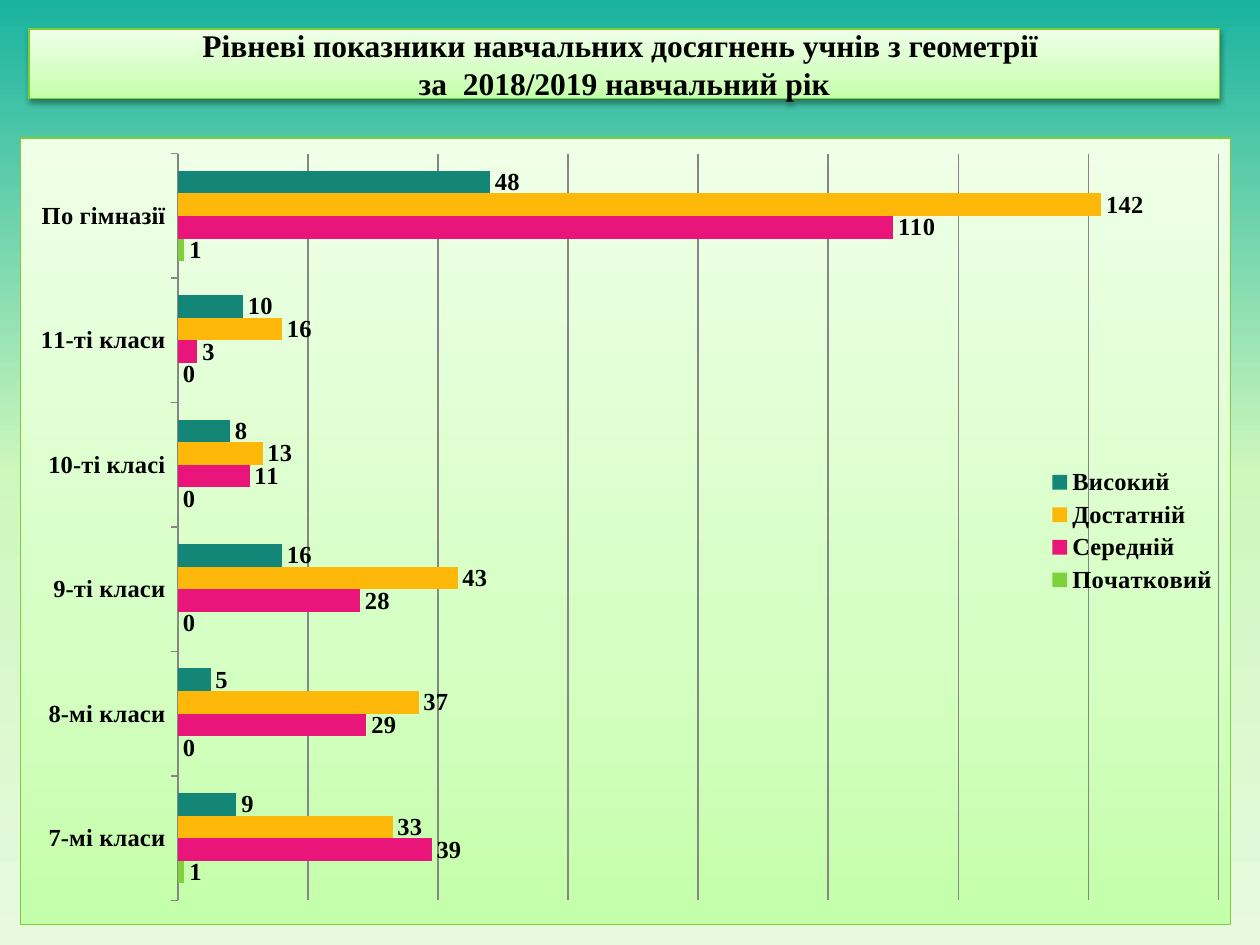
from lxml import etree
from pptx import Presentation
from pptx.chart.data import CategoryChartData
from pptx.dml.color import RGBColor
from pptx.enum.chart import XL_CHART_TYPE, XL_LABEL_POSITION, XL_LEGEND_POSITION, XL_TICK_LABEL_POSITION, XL_TICK_MARK
from pptx.enum.shapes import MSO_SHAPE
from pptx.enum.text import MSO_ANCHOR, PP_ALIGN
from pptx.util import Pt

BAR = XL_CHART_TYPE.BAR_CLUSTERED
OUT_END = XL_LABEL_POSITION.OUTSIDE_END
RIGHT = XL_LEGEND_POSITION.RIGHT
LOW = XL_TICK_LABEL_POSITION.LOW
TICK_OUT = XL_TICK_MARK.OUTSIDE
RECT = MSO_SHAPE.RECTANGLE
MIDDLE = MSO_ANCHOR.MIDDLE
CENTER = PP_ALIGN.CENTER

A = "http://schemas.openxmlformats.org/drawingml/2006/main"
C = "http://schemas.openxmlformats.org/drawingml/2006/chart"
COLORS = {
    "text": "000000", "border": "7CD036", "grid": "868686",
    "Початковий": "7FD13B", "Середній": "EA157A",
    "Достатній": "FEB80A", "Високий": "138677",
}
BACKGROUND = [(0, "1AB39F"), (50, "CEF7BD"), (100, "E7FADF")]
PANEL = [(0, "C4FFAA"), (35, "D5FFC3"), (100, "EFFFE8")]
TITLE_FONT = {"size": Pt(18), "bold": True, "name": "Times New Roman"}
CHART_FONT = {"size": Pt(14), "bold": True, "name": "Times New Roman"}
CATEGORIES = ["7-мі класи", "8-мі класи", "9-ті класи", "10-ті класі", "11-ті класи", "По гімназії"]
SERIES = {
    "Початковий": [1, 0, 0, 0, 0, 1],
    "Середній": [39, 29, 28, 11, 3, 110],
    "Достатній": [33, 37, 43, 13, 16, 142],
    "Високий": [9, 5, 16, 8, 10, 48],
}


def gradient(stops, angle):
    gs = "".join(f'<a:gs pos="{pos * 1000}"><a:srgbClr val="{color}"/></a:gs>' for pos, color in stops)
    return etree.fromstring(
        f'<a:gradFill xmlns:a="{A}" rotWithShape="1"><a:gsLst>{gs}</a:gsLst>'
        f'<a:lin ang="{angle * 60000}" scaled="0"/></a:gradFill>')


def set_font(font, values):
    for key, value in values.items():
        setattr(font, key, value)
    font.color.rgb = RGBColor.from_string(COLORS["text"])


prs = Presentation()
prs.slide_width, prs.slide_height = Pt(720), Pt(540)
s = prs.slides.add_slide(prs.slide_layouts[6])
s.background.fill.gradient()
old = s.element.find(f".//{{{A}}}gradFill")
old.getparent().replace(old, gradient(BACKGROUND, 90))

sp = s.shapes.add_shape(RECT, Pt(16.6), Pt(16.6), Pt(680.4), Pt(39.6))
sp.fill.gradient()
old = sp.element.spPr.find(f"{{{A}}}gradFill")
old.getparent().replace(old, gradient(PANEL, 270))
sp.line.color.rgb = RGBColor.from_string(COLORS["border"])
sp.line.width = Pt(0.75)
sp.shadow.inherit = False
sp.element.spPr.find(f"{{{A}}}effectLst").append(etree.fromstring(
    f'<a:outerShdw xmlns:a="{A}" blurRad="{Pt(3.1)}" dist="{Pt(1.6)}" dir="5400000" rotWithShape="0">'
    '<a:srgbClr val="000000"><a:alpha val="38000"/></a:srgbClr></a:outerShdw>'))
tf = sp.text_frame
tf.word_wrap = True
tf.vertical_anchor = MIDDLE
p = tf.paragraphs[0]
p.alignment = CENTER
p.text = "Рівневі показники навчальних досягнень учнів з геометрії \vза  2018/2019 навчальний рік"
for r in p.runs:
    set_font(r.font, TITLE_FONT)

data = CategoryChartData()
data.categories = CATEGORIES
for name, values in SERIES.items():
    data.add_series(name, values)
chart = s.shapes.add_chart(BAR, Pt(11.5), Pt(78.5), Pt(692), Pt(450), data).chart
chart.has_title = False
set_font(chart.font, {"size": Pt(10), "name": "Calibri"})

panel = etree.fromstring(
    f'<c:spPr xmlns:c="{C}" xmlns:a="{A}"><a:ln w="{Pt(0.75)}"><a:solidFill>'
    f'<a:srgbClr val="{COLORS["border"]}"/></a:solidFill></a:ln></c:spPr>')
panel.insert(0, gradient(PANEL, 270))
chart.element.find(f"{{{C}}}chart").addnext(panel)

plot_area = chart.element.find(f".//{{{C}}}plotArea")
for old in plot_area.findall(f"{{{C}}}layout"):
    plot_area.remove(old)
layout = {"layoutTarget": "inner", "xMode": "edge", "yMode": "edge", "x": 0.13, "y": 0.02, "w": 0.86, "h": 0.95}
items = "".join(f'<c:{key} val="{value}"/>' for key, value in layout.items())
plot_area.insert(0, etree.fromstring(
    f'<c:layout xmlns:c="{C}"><c:manualLayout>{items}</c:manualLayout></c:layout>'))

plot = chart.plots[0]
plot.gap_width = 150
plot.overlap = 0
plot.vary_by_categories = False
for series in plot.series:
    series.format.fill.solid()
    series.format.fill.fore_color.rgb = RGBColor.from_string(COLORS[series.name])
    labels = series.data_labels
    labels.show_value = True
    labels.position = OUT_END
    set_font(labels.font, CHART_FONT)

cat_axis = chart.category_axis
cat_axis.major_tick_mark = TICK_OUT
cat_axis.tick_label_position = LOW
set_font(cat_axis.tick_labels.font, CHART_FONT)
val_axis = chart.value_axis
val_axis.visible = False
val_axis.minimum_scale, val_axis.maximum_scale, val_axis.major_unit = 0, 160, 20
val_axis.has_major_gridlines = True
for line in (cat_axis.format.line, val_axis.major_gridlines.format.line):
    line.color.rgb = RGBColor.from_string(COLORS["grid"])
    line.width = Pt(0.75)

chart.has_legend = True
chart.legend.position = RIGHT
chart.legend.include_in_layout = False
set_font(chart.legend.font, CHART_FONT)

prs.save("out.pptx")
